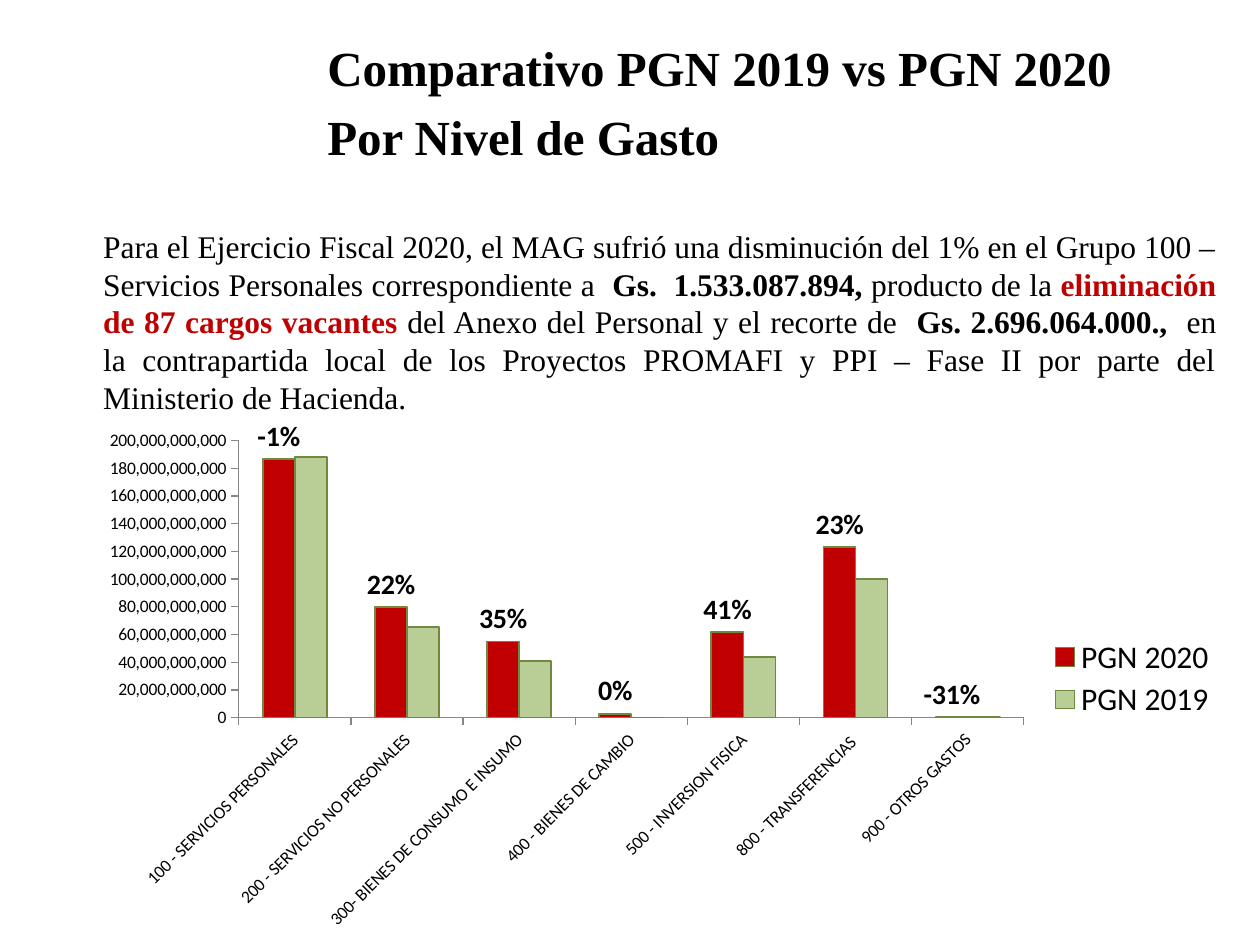
from lxml.etree import SubElement
from pptx import Presentation
from pptx.chart.data import CategoryChartData
from pptx.dml.color import RGBColor
from pptx.enum.chart import XL_CHART_TYPE, XL_LABEL_POSITION, XL_LEGEND_POSITION, XL_TICK_MARK
from pptx.enum.text import PP_ALIGN
from pptx.oxml.ns import qn
from pptx.util import Cm, Pt

COLORS = {
    "text": "000000",
    "red": "C00000",
    "green": "B9CD96",
    "outline": "71893F",
    "axis": "868686",
}


def rgb(name):
    return RGBColor.from_string(COLORS[name])


def set_layout(element, successors, x, y, w, h, inner=False):
    """Place a chart part by fractions of the chart area."""
    for old in element.findall(qn("c:layout")):
        element.remove(old)
    layout = SubElement(element, qn("c:layout"))
    manual = SubElement(layout, qn("c:manualLayout"))
    settings = [("layoutTarget", "inner")] if inner else []
    settings += [("xMode", "edge"), ("yMode", "edge"), ("x", x), ("y", y), ("w", w), ("h", h)]
    for tag, value in settings:
        SubElement(manual, qn(f"c:{tag}")).set("val", str(value))
    following = next(child for child in element if child.tag in map(qn, successors))
    following.addprevious(layout)


class SlideBuilder:
    serif = "Times New Roman"
    sans = "Calibri"

    def __init__(self, slide):
        self.slide = slide

    def font(self, font, name, size, bold=False, color="text"):
        font.name, font.size, font.bold = name, Pt(size), bold
        font.color.rgb = rgb(color)

    def text(self, box, paragraphs, size, align=PP_ALIGN.LEFT, space_before=0):
        """Each paragraph is a list of (text, bold, color) runs."""
        frame = self.slide.shapes.add_textbox(*map(Cm, box)).text_frame
        frame.word_wrap = True
        for index, runs in enumerate(paragraphs):
            paragraph = frame.add_paragraph() if index else frame.paragraphs[0]
            paragraph.alignment = align
            paragraph.space_before = Pt(space_before)
            for content, bold, color in runs:
                run = paragraph.add_run()
                run.text = content
                self.font(run.font, self.serif, size, bold, color)

    def column_chart(self, box, categories, series, changes):
        """Each series is (name, values, fill color); changes label the first."""
        data = CategoryChartData(number_format="#,##0")
        data.categories = categories
        for name, values, _ in series:
            data.add_series(name, values)
        chart = self.slide.shapes.add_chart(
            XL_CHART_TYPE.COLUMN_CLUSTERED, *map(Cm, box), data).chart
        chart.has_title = False
        self.font(chart.font, self.sans, 10)

        # Columns
        plot = chart.plots[0]
        plot.gap_width, plot.overlap = 150, 0
        plot.vary_by_categories = False
        for columns, (_, _, color) in zip(plot.series, series):
            columns.invert_if_negative = False
            columns.format.fill.solid()
            columns.format.fill.fore_color.rgb = rgb(color)
            columns.format.line.color.rgb = rgb("outline")
            columns.format.line.width = Pt(1)

        # Percentage labels
        for point, change in enumerate(changes):
            label = plot.series[0].points[point].data_label
            run = label.text_frame.paragraphs[0].add_run()
            run.text = change
            self.font(run.font, self.sans, 16, bold=True)
            label.position = XL_LABEL_POSITION.OUTSIDE_END

        # Axes
        for axis in (chart.category_axis, chart.value_axis):
            axis.has_major_gridlines = False
            axis.major_tick_mark = XL_TICK_MARK.OUTSIDE
            axis.minor_tick_mark = XL_TICK_MARK.NONE
            axis.format.line.color.rgb = rgb("axis")
            self.font(axis.tick_labels.font, self.sans, 10, axis is chart.category_axis)
        category_text = chart.category_axis._element.find(qn("c:txPr"))
        category_text.find(qn("a:bodyPr")).set("rot", str(-45 * 60000))
        scale = chart.value_axis
        scale.minimum_scale, scale.maximum_scale = 0, 200e9
        scale.major_unit = 20e9
        scale.tick_labels.number_format = "#,##0"
        scale.tick_labels.number_format_is_linked = False

        # Legend and plot area
        chart.has_legend = True
        chart.legend.position = XL_LEGEND_POSITION.RIGHT
        chart.legend.include_in_layout = False
        self.font(chart.legend.font, self.sans, 18)
        set_layout(chart.legend._element, ["c:overlay"], 0.84, 0.41, 0.15, 0.17)
        set_layout(chart._chartSpace.chart.plotArea, ["c:barChart"],
                   0.13, 0.04, 0.69, 0.53, inner=True)


def main():
    deck = Presentation()
    deck.slide_width, deck.slide_height = Cm(25.4), Cm(19.05)
    builder = SlideBuilder(deck.slides.add_slide(deck.slide_layouts[6]))

    # Title
    title = ["Comparativo PGN 2019 vs PGN 2020", "Por Nivel de Gasto"]
    builder.text((6.35, 0.64, 18.42, 2.74), [[(line, True, "text")] for line in title],
                 size=28, space_before=5.6)

    # Explanation
    explanation = [
        ("Para el Ejercicio Fiscal 2020, el MAG sufrió una disminución del 1% en el "
         "Grupo 100 – Servicios Personales correspondiente a  ", False, "text"),
        ("Gs.  1.533.087.894, ", True, "text"),
        ("producto de la ", False, "text"),
        ("eliminación de 87 cargos vacantes ", True, "red"),
        ("del Anexo del Personal y el recorte de  ", False, "text"),
        ("Gs. 2.696.064.000., ", True, "text"),
        (" en la contrapartida local de los Proyectos PROMAFI y PPI – Fase II por "
         "parte del Ministerio de Hacienda.", False, "text"),
    ]
    builder.text((1.83, 4.45, 22.94, 4.11), [explanation], size=18, align=PP_ALIGN.JUSTIFY)

    # Budget by spending level
    levels = [
        ("100 - SERVICIOS PERSONALES", 186700000000, 188200000000, "-1%"),
        ("200 - SERVICIOS NO PERSONALES", 79972780949, 65500000000, "22%"),
        ("300- BIENES DE CONSUMO E INSUMO", 55015193761, 40700000000, "35%"),
        ("400 - BIENES DE CAMBIO", 2820136000, 0, "0%"),
        ("500 - INVERSION FISICA", 61587282920, 43700000000, "41%"),
        ("800 - TRANSFERENCIAS ", 123200000000, 100300000000, "23%"),
        ("900 - OTROS GASTOS", 312605876, 450000000, "-31%"),
    ]
    names, budget_2020, budget_2019, changes = zip(*levels)
    builder.column_chart(
        (1.83, 8.46, 22.94, 10.54), names,
        [("PGN 2020", budget_2020, "red"), ("PGN 2019", budget_2019, "green")], changes)

    deck.save("out.pptx")


if __name__ == "__main__":
    main()
